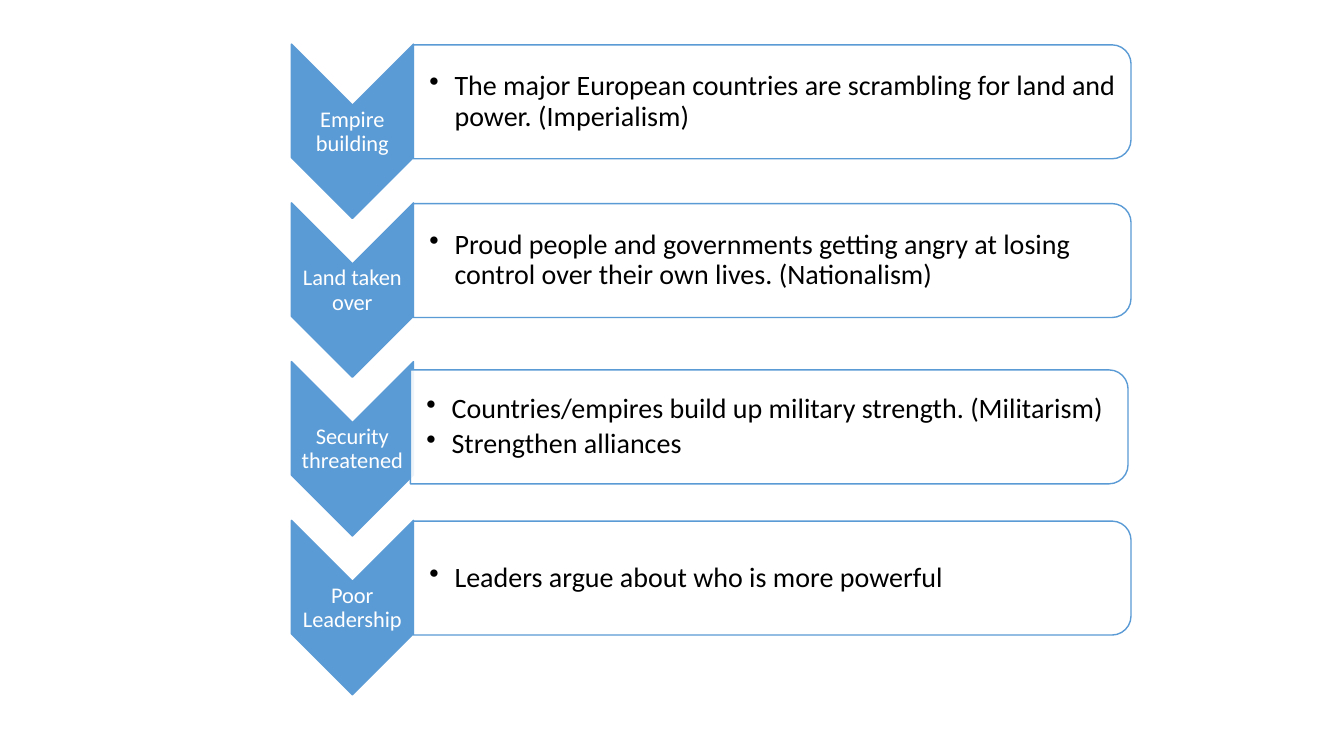
from dataclasses import dataclass

import pptx
import pptx.util
import pptx.dml.color
import pptx.enum.shapes
import pptx.enum.text
import pptx.oxml
import pptx.oxml.ns

SHAPES = pptx.enum.shapes.MSO_SHAPE
ALIGN = pptx.enum.text.PP_ALIGN


@dataclass(frozen=True)
class Theme:
    accent: str = "5B9BD5"
    panel: str = "FFFFFF"
    panel_opacity: int = 90
    label_text: str = "FFFFFF"
    body_text: str = "000000"
    font: str = "Calibri"
    label_size: int = 16
    body_size: int = 20
    outline: int = 1
    line_spacing: float = 0.9


@dataclass(frozen=True)
class Box:
    """A rectangle in percent of the slide's width and height."""
    left: float
    top: float
    width: float
    height: float

    def moved(self, right, down):
        return Box(self.left + right, self.top + down, self.width, self.height)


class ChevronList:
    def __init__(self, deck, theme):
        self.theme = theme
        self.slide_width, self.slide_height = deck.slide_width, deck.slide_height
        self.slide = deck.slides.add_slide(deck.slide_layouts[6])

    def lengths(self, box):
        return [round(share * size / 100) for share, size in (
            (box.left, self.slide_width), (box.top, self.slide_height),
            (box.width, self.slide_width), (box.height, self.slide_height))]

    def quarter_turned(self, kind, box, fill, opacity=100):
        """Add a shape turned clockwise by 90 degrees that then covers box."""
        left, top, width, height = self.lengths(box)
        shift = (width - height) // 2
        shape = self.slide.shapes.add_shape(kind, left + shift, top - shift, height, width)
        shape.rotation = 90
        shape.shadow.inherit = False
        shape.fill.solid()
        shape.fill.fore_color.rgb = pptx.dml.color.RGBColor.from_string(fill)
        if opacity < 100:
            color = shape.fill._xPr.find(".//" + pptx.oxml.ns.qn("a:srgbClr"))
            color.append(pptx.oxml.parse_xml(
                f'<a:alpha {pptx.oxml.ns.nsdecls("a")} val="{opacity * 1000}"/>'))
        shape.line.color.rgb = pptx.dml.color.RGBColor.from_string(self.theme.accent)
        shape.line.width = pptx.util.Pt(self.theme.outline)

    def text(self, box, lines, size, color, space_after, inset=0.01, bulleted=False):
        frame = self.slide.shapes.add_textbox(*self.lengths(box)).text_frame
        frame.word_wrap = True
        frame.vertical_anchor = pptx.enum.text.MSO_ANCHOR.MIDDLE
        frame.margin_left = pptx.util.Inches(inset)
        frame.margin_top = frame.margin_right = frame.margin_bottom = pptx.util.Inches(0.01)
        for index, line in enumerate(lines):
            paragraph = frame.add_paragraph() if index else frame.paragraphs[0]
            paragraph.alignment = ALIGN.LEFT if bulleted else ALIGN.CENTER
            paragraph.line_spacing = self.theme.line_spacing
            paragraph.space_after = pptx.util.Pt(space_after)
            if bulleted:
                self.bullet(paragraph)
            run = paragraph.add_run()
            run.text = line
            run.font.name = self.theme.font
            run.font.size = pptx.util.Pt(size)
            run.font.color.rgb = pptx.dml.color.RGBColor.from_string(color)

    def bullet(self, paragraph):
        paragraph.level = 1
        properties = paragraph._p.get_or_add_pPr()
        hang = pptx.util.Inches(0.25)
        properties.set("marL", str(hang))
        properties.set("indent", str(-hang))
        properties.append(pptx.oxml.parse_xml(
            f'<a:buChar {pptx.oxml.ns.nsdecls("a")} char="•"/>'))

    def chevron(self, box, label_box, label):
        self.quarter_turned(SHAPES.CHEVRON, box, self.theme.accent)
        self.text(label_box, [label], self.theme.label_size, self.theme.label_text,
                  space_after=5.6)

    def panel(self, box, text_box, points):
        self.quarter_turned(SHAPES.ROUND_2_SAME_RECTANGLE, box, self.theme.panel,
                            self.theme.panel_opacity)
        self.text(text_box, points, self.theme.body_size, self.theme.body_text,
                  space_after=3, inset=0.16, bulleted=True)


ROW_PITCH = 21
CHEVRON = Box(21.68, 5.83, 9.08, 23.07)
LABEL = Box(21.68, 14, 9.08, 6.93)
PANEL = Box(30.75, 5.93, 53.4, 15.07)
POINTS = Box(30.75, 6.67, 53.02, 13.6)
ALIGNED = (0, 0)
NUDGED = (-0.22, 1)

CAUSES = [
    ("Empire building", ALIGNED,
     ["The major European countries are scrambling for land and power. (Imperialism)"]),
    ("Land taken over", ALIGNED,
     ["Proud people and governments getting angry at losing control over their own lives. "
      "(Nationalism)"]),
    ("Security threatened", NUDGED,
     ["Countries/empires build up military strength. (Militarism)",
      "Strengthen alliances"]),
    ("Poor Leadership", ALIGNED,
     ["Leaders argue about who is more powerful"]),
]


def main():
    deck = pptx.Presentation()
    deck.slide_width = pptx.util.Inches(13.33)
    deck.slide_height = pptx.util.Inches(7.5)
    causes = ChevronList(deck, Theme())
    for row, (label, (right, down), points) in enumerate(CAUSES):
        drop = row * ROW_PITCH
        causes.chevron(CHEVRON.moved(0, drop), LABEL.moved(0, drop), label)
        causes.panel(PANEL.moved(right, drop + down), POINTS.moved(right, drop + down), points)
    deck.save("out.pptx")


if __name__ == "__main__":
    main()
